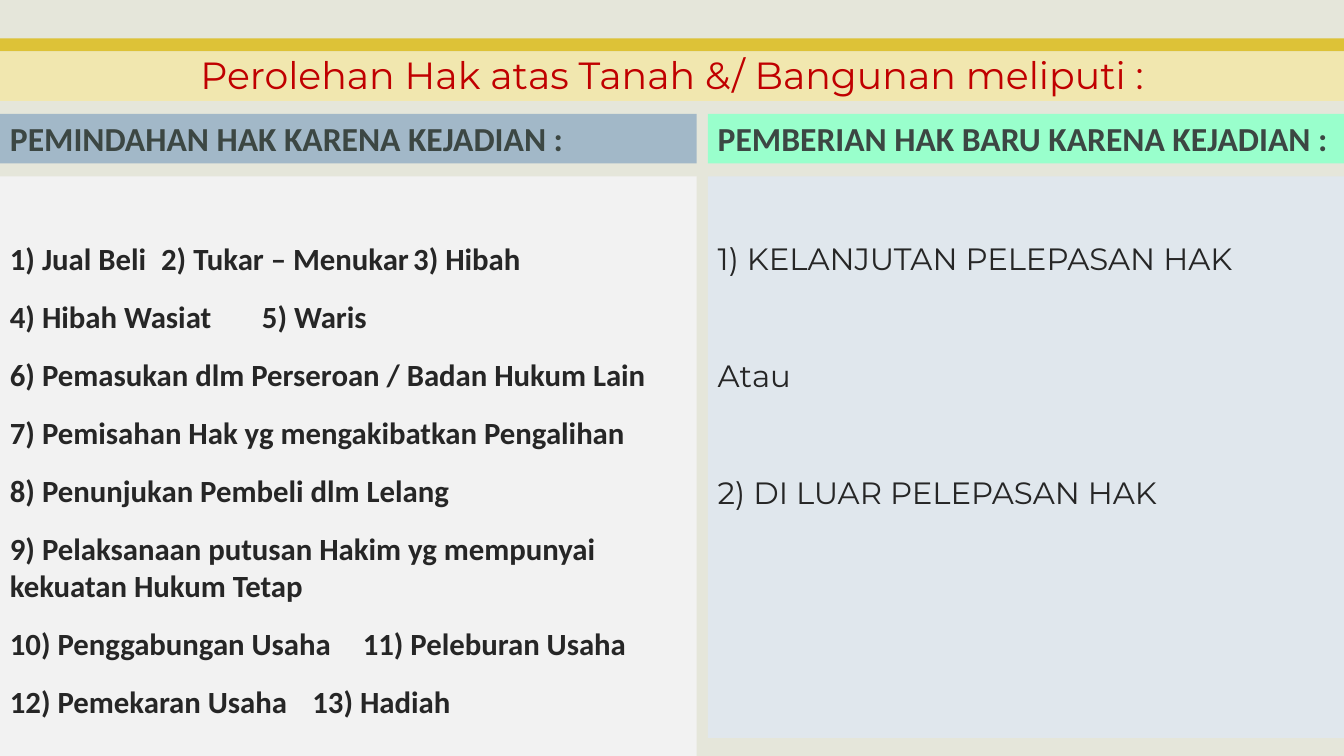
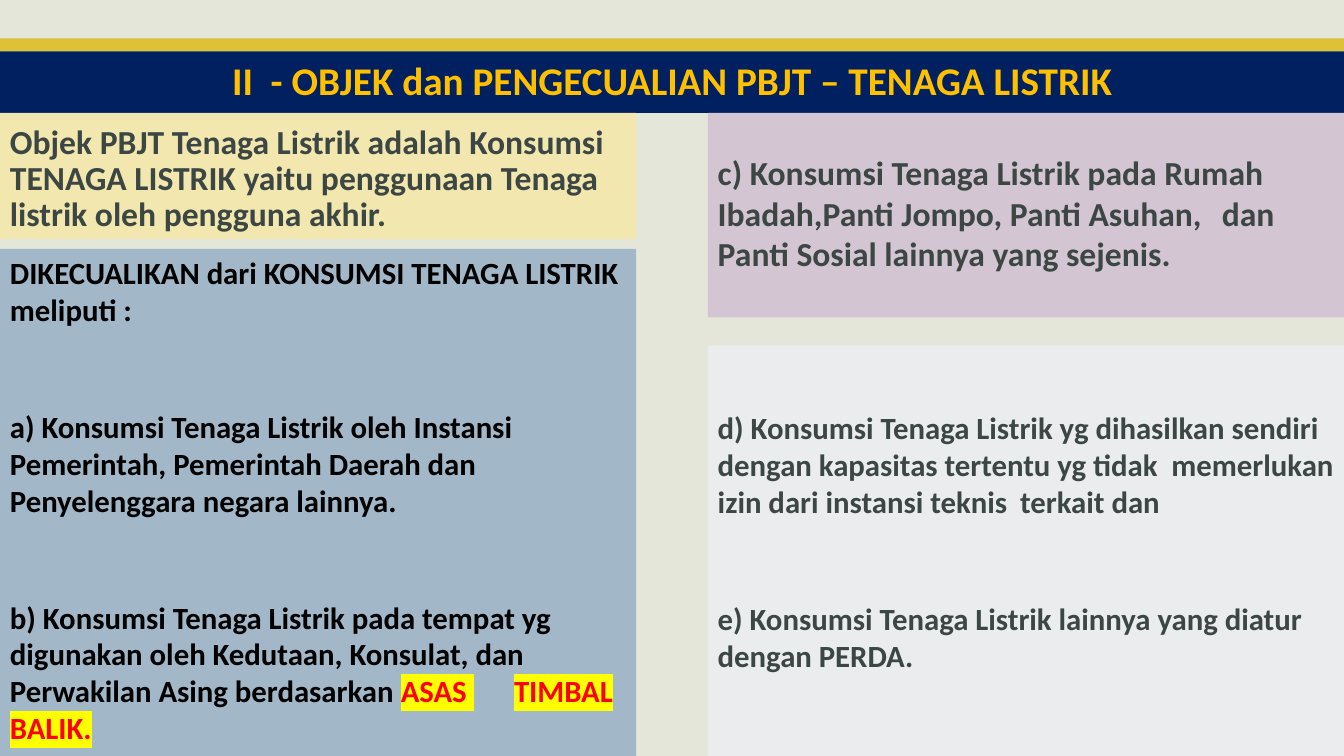
"""Build two slides on land rights and electricity tax."""
from lxml.etree import SubElement
from pptx import Presentation
from pptx.dml.color import RGBColor
from pptx.enum.shapes import MSO_SHAPE
from pptx.enum.text import MSO_ANCHOR, PP_ALIGN
from pptx.oxml.ns import qn
from pptx.util import Pt

PX = 9144
WIDE, HIGH = 1333, 750
RIGHT, HALF = 702, 631
BAND, EDGE = 38, 51
PAD, INSET = 10, 5
DROP = 63
STEP, LEAP = 15, 57
HEX = {
    "page": "E5E6DA", "gold": "DDC237", "cream": "F1E7AF", "navy": "002060",
    "steel": "A2B8C8", "mint": "99FFCC", "mist": "F2F2F2", "ice": "E0E7ED",
    "mauve": "D3C5D2", "cloud": "EAECEE", "amber": "FFC000", "wine": "C00000",
    "slate": "3C4743", "ink": "262626", "black": "000000", "red": "FF0000",
    "yellow": "FFFF00",
}


class Deck:
    """Hold the shared style and the current slide."""

    def __init__(self):
        self.show = Presentation()
        self.show.slide_width = WIDE * PX
        self.show.slide_height = HIGH * PX

    def page(self):
        """Start a slide with its backdrop and gold band."""
        self.slide = self.show.slides.add_slide(self.show.slide_layouts[6])
        fill = self.slide.background.fill
        fill.solid()
        fill.fore_color.rgb = RGBColor.from_string(HEX["page"])
        self.rect(0, BAND, WIDE, EDGE - BAND, "gold")

    def rect(self, x, y, w, h, fill):
        """Draw a plain filled rectangle."""
        box = self.slide.shapes.add_shape(
            MSO_SHAPE.RECTANGLE, x * PX, y * PX, w * PX, h * PX)
        box.shadow.inherit = False
        box.fill.solid()
        box.fill.fore_color.rgb = RGBColor.from_string(HEX[fill])
        box.line.fill.background()
        return box

    def panel(self, x, y, w, h, fill, paras, color, size=22, face="Calibri",
              bold=True, anchor=MSO_ANCHOR.TOP, align=PP_ALIGN.LEFT,
              pitch=1.0, top=INSET, base=INSET):
        """Draw a filled box from (space before, text or runs) pairs."""
        frame = self.rect(x, y, w, h, fill).text_frame
        frame.word_wrap = True
        frame.vertical_anchor = anchor
        frame.margin_left = frame.margin_right = PAD * PX
        frame.margin_top, frame.margin_bottom = top * PX, base * PX
        for i, (gap, text) in enumerate(paras):
            para = frame.add_paragraph() if i else frame.paragraphs[0]
            para.alignment = align
            para.line_spacing = pitch
            para.space_before = Pt(gap)
            font = para.font
            font.name, font.size, font.bold = face, Pt(size), bold
            font.color.rgb = RGBColor.from_string(HEX[color])
            for part in [(text, None)] if isinstance(text, str) else text:
                self.run(para, *part)

    def run(self, para, text, mark):
        """Add a run, red on a marker colour if one is given."""
        run = para.add_run()
        run.text = text
        if mark:
            run.font.color.rgb = RGBColor.from_string(HEX["red"])
            glow = SubElement(run.font._element, qn("a:highlight"))
            SubElement(glow, qn("a:srgbClr")).set("val", HEX[mark])

    def title(self, text, h, fill, color, **style):
        """Draw the title bar under the gold band."""
        self.panel(0, EDGE, WIDE, h, fill, [(0, text)], color, pitch=0.95,
                   anchor=MSO_ANCHOR.MIDDLE, align=PP_ALIGN.CENTER, **style)

    def head(self, x, y, w, h, fill, text, **style):
        """Draw a heading box set at its lower edge."""
        self.panel(x, y, w, h, fill, [(0, text)], "slate", size=24,
                   anchor=MSO_ANCHOR.BOTTOM, **style)


def rights(deck):
    """Build the slide on ways to gain land rights."""
    deck.page()
    deck.title("Perolehan Hak atas Tanah &/ Bangunan meliputi :", 49,
               "cream", "wine", size=27, face="Montserrat", bold=False)
    deck.head(0, 113, 691, 49, "steel", "PEMINDAHAN HAK KARENA KEJADIAN :",
              pitch=0.9)
    deeds = [
        "1) Jual Beli\t2) Tukar – Menukar\t3) Hibah",
        "4) Hibah Wasiat\t\t5) Waris",
        "6) Pemasukan dlm Perseroan / Badan Hukum Lain",
        "7) Pemisahan Hak yg mengakibatkan Pengalihan",
        "8) Penunjukan Pembeli dlm Lelang",
        "9) Pelaksanaan putusan Hakim yg mempunyai \tkekuatan Hukum Tetap",
        "10) Penggabungan Usaha\t11) Peleburan Usaha",
        "12) Pemekaran Usaha\t13) Hadiah",
    ]
    deck.panel(0, 175, 691, 575, "mist",
               [(STEP if i else 0, deed) for i, deed in enumerate(deeds)],
               "ink", top=DROP)
    deck.head(RIGHT, 113, HALF, 49, "mint",
              "PEMBERIAN HAK BARU KARENA KEJADIAN :", pitch=0.9)
    deck.panel(RIGHT, 175, HALF, 557, "ice", [
        (0, "1) KELANJUTAN PELEPASAN HAK"),
        (LEAP, "Atau"),
        (LEAP, "2) DI LUAR PELEPASAN HAK"),
    ], "ink", face="Montserrat", bold=False, top=DROP)


def power(deck):
    """Build the slide on electricity tax and its exceptions."""
    deck.page()
    deck.title("II\u00a0 - OBJEK dan PENGECUALIAN PBJT – TENAGA LISTRIK".replace("\u00a0", " "),
               61, "navy", "amber", size=28)
    deck.head(0, 112, HALF, 125, "cream",
              "Objek PBJT Tenaga Listrik adalah Konsumsi TENAGA LISTRIK "
              "yaitu penggunaan Tenaga listrik oleh pengguna akhir.",
              pitch=0.9)
    deck.panel(0, 247, HALF, 503, "steel", [
        (0, "DIKECUALIKAN dari KONSUMSI TENAGA LISTRIK meliputi :"),
        (LEAP, "a) Konsumsi Tenaga Listrik oleh Instansi \tPemerintah, "
               "Pemerintah Daerah dan \tPenyelenggara negara lainnya."),
        (LEAP, [
            ("b) Konsumsi Tenaga Listrik pada tempat yg \tdigunakan oleh "
             "Kedutaan, Konsulat, dan \tPerwakilan Asing berdasarkan ", None),
            ("ASAS ", "yellow"),
            ("\t", None),
            ("TIMBAL BALIK.", "yellow"),
        ]),
    ], "black")
    deck.head(RIGHT, 112, HALF, 203, "mauve",
              "c) Konsumsi Tenaga Listrik pada Rumah \tIbadah,Panti Jompo, "
              "Panti Asuhan, \tdan Panti Sosial lainnya yang sejenis.",
              base=44)
    deck.panel(RIGHT, 343, HALF, 407, "cloud", [
        (0, "d) Konsumsi Tenaga Listrik yg dihasilkan sendiri \tdengan "
            "kapasitas tertentu yg tidak \tmemerlukan izin dari instansi "
            "teknis \tterkait dan"),
        (LEAP, "e) Konsumsi Tenaga Listrik lainnya yang diatur \tdengan "
               "PERDA."),
    ], "slate", top=DROP)


def main():
    """Build and save the deck."""
    deck = Deck()
    rights(deck)
    power(deck)
    deck.show.save("out.pptx")


if __name__ == "__main__":
    main()
